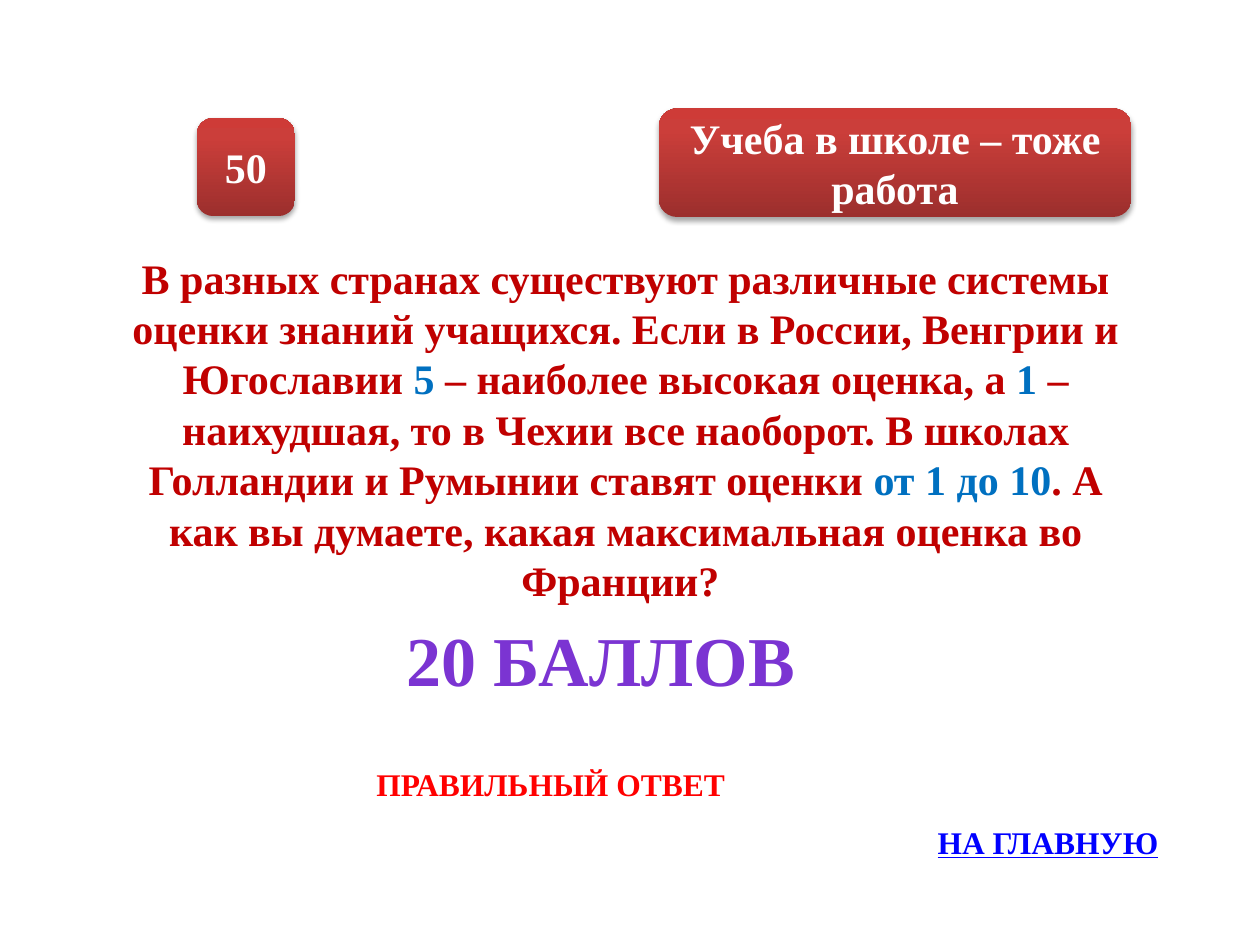
from pptx import Presentation
from pptx.dml.color import RGBColor
from pptx.enum.shapes import MSO_SHAPE
from pptx.enum.text import MSO_ANCHOR, MSO_AUTO_SIZE, PP_ALIGN
from pptx.oxml import parse_xml
from pptx.oxml.ns import nsdecls
from pptx.util import Pt

ROUNDED = MSO_SHAPE.ROUNDED_RECTANGLE
MIDDLE = MSO_ANCHOR.MIDDLE
FIT_SHAPE = MSO_AUTO_SIZE.SHAPE_TO_FIT_TEXT
CENTER, LEFT = PP_ALIGN.CENTER, PP_ALIGN.LEFT

FONT = "Times New Roman"
COLORS = {
    "white": "FFFFFF", "question": "C00000", "grade": "0070C0",
    "answer": "7B34D2", "answer_outline": "5E457C",
    "home": "0000FF", "label": "FF0000", "shadow": "000000",
}
# Gradients: angle in degrees, then (position in percent, colour)
RED_GRADIENT = (270, [(0, "9C2F2D"), (80, "CB3E3A"), (100, "CE3B37")])
VIOLET_GRADIENT = (90, [(0, "3D1B67"), (43, "7B34D2"), (48, "7330C4"), (100, "3D1B67")])

# Badges: text, (left, top, width, height)
BADGES = [
    ("Учеба в школе – тоже работа", (376.5, 62, 270, 62)),
    ("50", (112.5, 67.5, 56, 56)),
]

QUESTION = [
    ("В разных странах существуют различные системы оценки знаний учащихся. "
     "Если в России, Венгрии и Югославии ", "question"),
    ("5", "grade"),
    (" – наиболее высокая оценка, а ", "question"),
    ("1", "grade"),
    (" – наихудшая, то в Чехии все наоборот. В школах Голландии и Румынии "
     "ставят оценки ", "question"),
    ("от 1 до 10", "grade"),
    (". А как вы думаете, какая максимальная оценка во Франции? ", "question"),
]

# Text boxes: runs, (left, top, width, height), size, alignment, wrap
QUESTION_BOX = (QUESTION, (67.5, 140.5, 580, 211), 24, CENTER, True)
ANSWER_BOX = ([("20 БАЛЛОВ", "answer")], (202.5, 348.75, 281.25, 55.5), 40, CENTER, True)
HOME_BOX = ([("НА ГЛАВНУЮ", "home")], (528.75, 466.5, 141.5, 29), 18, LEFT, False)
LABEL_BOX = ([("ПРАВИЛЬНЫЙ ОТВЕТ", "label")], (208, 433.5, 247.5, 29), 18, LEFT, True)


def gradient_fill(angle, stops):
    stop_xml = "".join(
        f'<a:gs pos="{position * 1000}"><a:srgbClr val="{color}"/></a:gs>'
        for position, color in stops)
    return parse_xml(
        f'<a:gradFill {nsdecls("a")} rotWithShape="1"><a:gsLst>{stop_xml}</a:gsLst>'
        f'<a:lin ang="{angle * 60000}" scaled="0"/></a:gradFill>')


def add_run(paragraph, text, size, color):
    run = paragraph.add_run()
    run.text = text
    run.font.name = FONT
    run.font.size = Pt(size)
    run.font.bold = True
    run.font.color.rgb = RGBColor.from_string(COLORS[color])
    return run


def add_badge(slide, text, box):
    shape = slide.shapes.add_shape(ROUNDED, *map(Pt, box))
    shape.line.fill.background()
    shape.shadow.inherit = False
    properties = shape.element.spPr
    properties.insert(2, gradient_fill(*RED_GRADIENT))
    properties.xpath("a:effectLst")[0].append(parse_xml(
        f'<a:outerShdw {nsdecls("a")} blurRad="{Pt(3.1)}" dist="{Pt(1.8)}" '
        f'dir="5400000" rotWithShape="0"><a:srgbClr val="{COLORS["shadow"]}">'
        '<a:alpha val="35000"/></a:srgbClr></a:outerShdw>'))
    text_frame = shape.text_frame
    text_frame.word_wrap = True
    text_frame.vertical_anchor = MIDDLE
    paragraph = text_frame.paragraphs[0]
    paragraph.alignment = CENTER
    add_run(paragraph, text, 24, "white")


def add_text(slide, runs, box, size, alignment, wrap):
    text_frame = slide.shapes.add_textbox(*map(Pt, box)).text_frame
    text_frame.word_wrap = wrap
    text_frame.auto_size = FIT_SHAPE
    paragraph = text_frame.paragraphs[0]
    paragraph.alignment = alignment
    return [add_run(paragraph, text, size, color) for text, color in runs]


def style_answer(run):
    run.font.fill.background()
    properties = run.font.fill._xPr
    properties.replace(properties.xpath("a:noFill")[0], gradient_fill(*VIOLET_GRADIENT))
    properties.insert(0, parse_xml(
        f'<a:ln {nsdecls("a")} w="{Pt(0.71)}"><a:solidFill>'
        f'<a:srgbClr val="{COLORS["answer_outline"]}"/></a:solidFill></a:ln>'))


def main():
    presentation = Presentation()
    presentation.slide_width, presentation.slide_height = Pt(720), Pt(540)
    slide = presentation.slides.add_slide(presentation.slide_layouts[6])

    # Category and points
    for text, box in BADGES:
        add_badge(slide, text, box)

    # Question, answer and navigation
    add_text(slide, *QUESTION_BOX)
    style_answer(add_text(slide, *ANSWER_BOX)[0])
    add_text(slide, *HOME_BOX)[0].font.underline = True
    add_text(slide, *LABEL_BOX)

    presentation.save("out.pptx")


if __name__ == "__main__":
    main()
